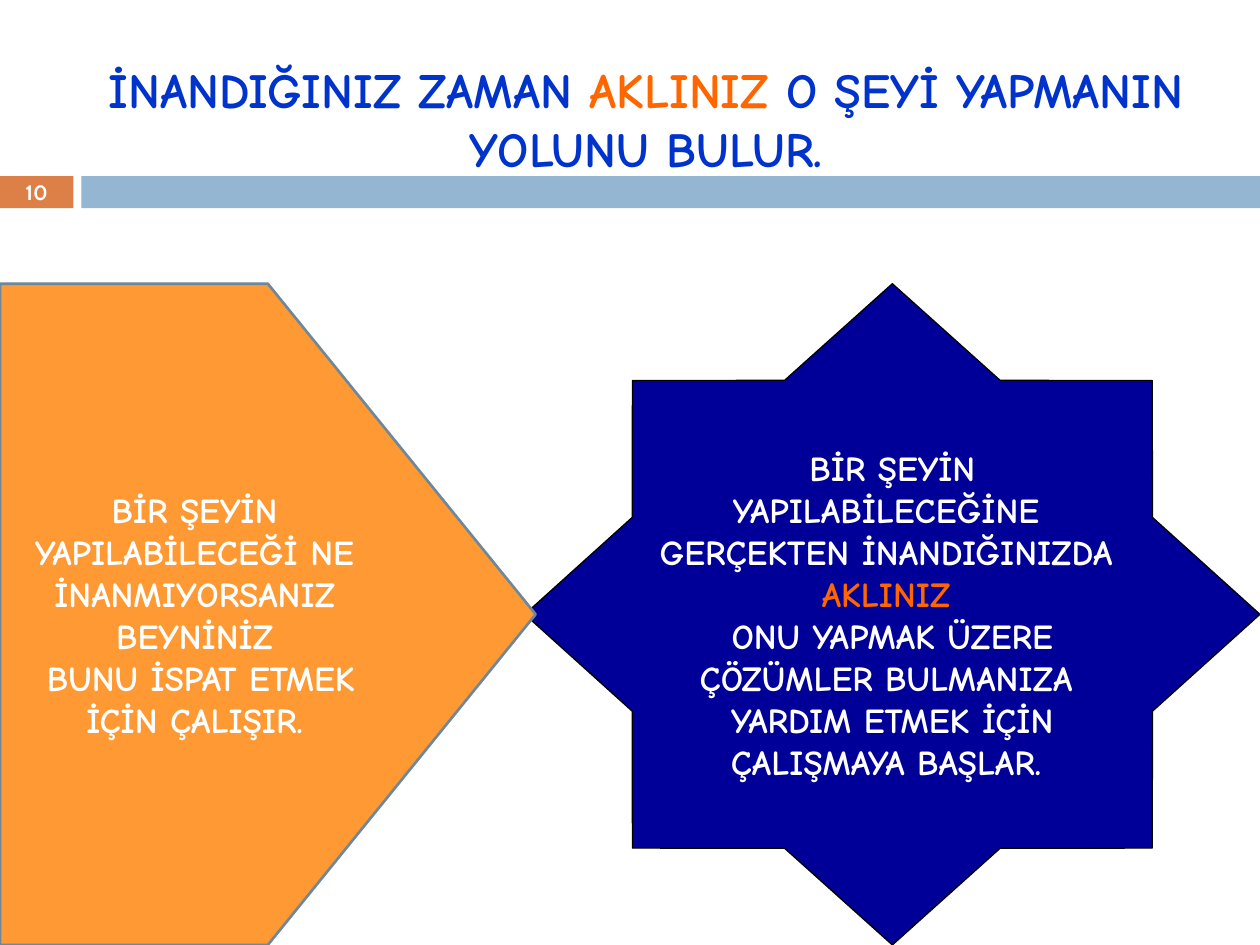
from dataclasses import dataclass

from pptx import Presentation
from pptx.dml.color import RGBColor
from pptx.enum.shapes import MSO_SHAPE
from pptx.enum.text import MSO_ANCHOR, PP_ALIGN
from pptx.util import Cm, Pt

WHITE = RGBColor(0xFF, 0xFF, 0xFF)
BLACK = RGBColor(0x00, 0x00, 0x00)
TITLE_BLUE = RGBColor(0x00, 0x33, 0xCC)
ACCENT_ORANGE = RGBColor(0xFF, 0x66, 0x00)
BAND_ORANGE = RGBColor(0xDD, 0x80, 0x47)
BAND_BLUE = RGBColor(0x94, 0xB6, 0xD2)
STAR_BLUE = RGBColor(0x00, 0x00, 0x99)
ARROW_ORANGE = RGBColor(0xFF, 0x99, 0x33)
ARROW_EDGE = RGBColor(0x6D, 0x87, 0x9B)

PAGE_WIDTH, PAGE_HEIGHT = 25.4, 19.05
BODY_FONT = "Comic Neue"
HIGHLIGHT = "AKLINIZ"


@dataclass(frozen=True)
class Area:
    left: float
    top: float
    width: float
    height: float

    def lengths(self) -> tuple:
        return Cm(self.left), Cm(self.top), Cm(self.width), Cm(self.height)


@dataclass(frozen=True)
class Panel:
    preset: MSO_SHAPE
    area: Area
    fill: RGBColor
    edge: RGBColor | None = None
    edge_width: float = 0
    lines: tuple[str, ...] = ()
    wrap: bool = True
    adjustment: float | None = None


def format_span(span, size: float, color: RGBColor, font: str = BODY_FONT) -> None:
    span.font.name = font
    span.font.size = Pt(size)
    span.font.bold = True
    span.font.color.rgb = color


def add_panel(page, panel: Panel) -> None:
    shape = page.shapes.add_shape(panel.preset, *panel.area.lengths())
    shape.shadow.inherit = False
    shape.fill.solid()
    shape.fill.fore_color.rgb = panel.fill
    if panel.adjustment is not None:
        shape.adjustments[0] = panel.adjustment
    if panel.edge is None:
        shape.line.fill.background()
    else:
        shape.line.color.rgb = panel.edge
        shape.line.width = Pt(panel.edge_width)
    if panel.lines:
        frame = shape.text_frame
        frame.text = "\n".join(panel.lines)
        frame.word_wrap = panel.wrap
        frame.vertical_anchor = MSO_ANCHOR.MIDDLE
        for para in frame.paragraphs:
            para.alignment = PP_ALIGN.CENTER
            for span in para.runs:
                color = ACCENT_ORANGE if span.text.strip() == HIGHLIGHT else WHITE
                format_span(span, 20, color)


def add_page_number(page, area: Area, number: str) -> None:
    box = page.shapes.add_textbox(*area.lengths())
    frame = box.text_frame
    frame.text = number
    frame.word_wrap = True
    frame.vertical_anchor = MSO_ANCHOR.MIDDLE
    frame.margin_left = frame.margin_right = 0
    frame.margin_top = frame.margin_bottom = 0
    para = frame.paragraphs[0]
    para.alignment = PP_ALIGN.CENTER
    format_span(para.runs[0], 11.9, WHITE, "Cabin")


def add_title(page, area: Area, parts: tuple[str, ...]) -> None:
    box = page.shapes.add_textbox(*area.lengths())
    box.text_frame.word_wrap = True
    para = box.text_frame.paragraphs[0]
    para.alignment = PP_ALIGN.CENTER
    for part in parts:
        span = para.add_run()
        span.text = part
        format_span(span, 28, ACCENT_ORANGE if part == HIGHLIGHT else TITLE_BLUE)


def main() -> None:
    deck = Presentation()
    deck.slide_width, deck.slide_height = Cm(PAGE_WIDTH), Cm(PAGE_HEIGHT)
    page = deck.slides.add_slide(deck.slide_layouts[6])

    number_area = Area(0, 3.55, 1.48, 0.65)
    band_left = 1.64
    band_area = Area(band_left, 3.55, PAGE_WIDTH - band_left, 0.65)
    add_panel(page, Panel(MSO_SHAPE.RECTANGLE, number_area, BAND_ORANGE))
    add_panel(page, Panel(MSO_SHAPE.RECTANGLE, band_area, BAND_BLUE))
    add_page_number(page, number_area, "10")
    add_title(
        page,
        Area(0.64, 1.07, 24.76, 2.64),
        ("İNANDIĞINIZ ZAMAN ", HIGHLIGHT, " O ŞEYİ YAPMANIN YOLUNU BULUR."),
    )

    panel_top, star_left = 5.72, 10.58
    panel_height = PAGE_HEIGHT - panel_top
    star = Panel(
        MSO_SHAPE.STAR_8_POINT,
        Area(star_left, panel_top, PAGE_WIDTH - star_left, panel_height),
        STAR_BLUE,
        BLACK,
        0.75,
        (
            "BİR ŞEYİN",
            "YAPILABİLECEĞİNE ",
            "GERÇEKTEN İNANDIĞINIZDA ",
            "AKLINIZ ",
            "ONU YAPMAK ÜZERE",
            "ÇÖZÜMLER BULMANIZA ",
            "YARDIM ETMEK İÇİN",
            "ÇALIŞMAYA BAŞLAR. ",
        ),
        wrap=False,
        adjustment=0.383,
    )
    arrow = Panel(
        MSO_SHAPE.PENTAGON,
        Area(0, panel_top, 10.8, panel_height),
        ARROW_ORANGE,
        ARROW_EDGE,
        1.5,
        (
            "BİR ŞEYİN ",
            "YAPILABİLECEĞİ NE ",
            "İNANMIYORSANIZ ",
            "BEYNİNİZ ",
            "BUNU İSPAT ETMEK",
            "İÇİN ÇALIŞIR. ",
        ),
    )
    for panel in (star, arrow):
        add_panel(page, panel)

    deck.save("out.pptx")


if __name__ == "__main__":
    main()
